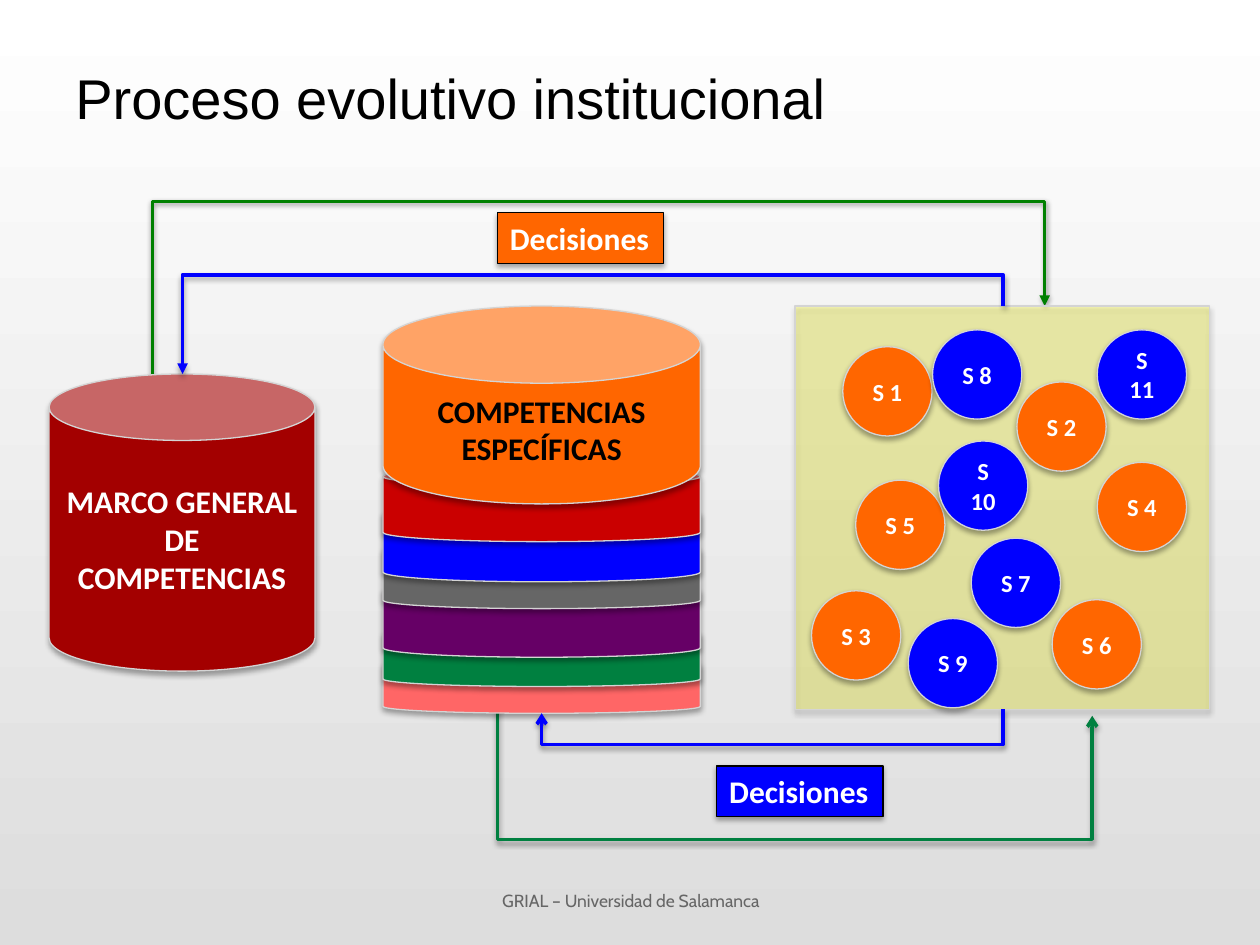
from lxml import etree
from pptx import Presentation
from pptx import util as u
from pptx.dml.color import RGBColor
from pptx.enum import shapes, text
from pptx.oxml import ns

BLACK = RGBColor(0x00, 0x00, 0x00)
WHITE = RGBColor(0xFF, 0xFF, 0xFF)
SILVER = RGBColor(0xDD, 0xDD, 0xDD)
EDGE = RGBColor(0xD4, 0xD4, 0xD4)
GRAY = RGBColor(0x66, 0x66, 0x66)
ORANGE = RGBColor(0xFF, 0x66, 0x00)
BLUE = RGBColor(0x00, 0x00, 0xFF)
LEAF = RGBColor(0x00, 0x80, 0x00)
GREEN = RGBColor(0x00, 0x80, 0x40)
WINE = RGBColor(0xA3, 0x00, 0x00)
RED = RGBColor(0xCA, 0x00, 0x00)
PLUM = RGBColor(0x66, 0x00, 0x66)
PINK = RGBColor(0xFF, 0x66, 0x66)
YELLOW = RGBColor(0xFF, 0xFF, 0x00)

CAN = shapes.MSO_SHAPE.CAN
BOX = shapes.MSO_SHAPE.RECTANGLE
DISC = shapes.MSO_SHAPE.OVAL
MID = text.MSO_ANCHOR.MIDDLE
TOP = text.MSO_ANCHOR.TOP
LEFT = text.PP_ALIGN.LEFT
CENTER = text.PP_ALIGN.CENTER

STACK_X, STACK_W, STACK_Y = 7.72, 6.4, 6.17
LAYERS = [
    (13.26, 1.12, PINK), (12.62, 1.22, GREEN), (11.73, 1.52, PLUM),
    (10.92, 1.35, GRAY), (10.16, 1.57, BLUE), (9.42, 1.5, RED),
]
DISC_D = 1.8
DISCS = [
    (5, 17.25, 9.68, ORANGE), (4, 22.12, 9.32, ORANGE),
    (3, 16.36, 11.91, ORANGE), (2, 20.5, 7.7, ORANGE),
    (1, 16.99, 6.99, ORANGE), (6, 21.21, 12.09, ORANGE),
    (8, 18.8, 6.65, BLUE), (7, 19.58, 10.85, BLUE),
    (9, 18.31, 12.47, BLUE), (10, 18.92, 8.89, BLUE),
    (11, 22.12, 6.65, BLUE),
]


def add(node, tag, **attrs):
    """Append a namespaced child element with the given attributes."""
    kid = etree.SubElement(node, ns.qn(tag))
    for key, val in attrs.items():
        kid.set(key, str(val))
    return kid


def shade(node, blur, dist, alpha):
    """Give a property element a black shadow that falls downwards."""
    for old in node.findall(ns.qn("a:effectLst")):
        node.remove(old)
    drop = add(add(node, "a:effectLst"), "a:outerShdw", blurRad=u.Pt(blur),
               dist=u.Pt(dist), dir=5400000, rotWithShape=0)
    add(add(drop, "a:srgbClr", val=BLACK), "a:alpha", val=alpha * 1000)


def write(shape, words, size=18, font="Calibri", color=WHITE, bold=True,
          align=CENTER, anchor=MID, wrap=True):
    """Fill a shape with one formatted paragraph and return its run."""
    frame = shape.text_frame
    frame.word_wrap = wrap
    frame.vertical_anchor = anchor
    para = frame.paragraphs[0]
    para.alignment = align
    run = para.add_run()
    run.text = words
    run.font.size = u.Pt(size)
    run.font.name = font
    run.font.bold = bold
    run.font.color.rgb = color
    return run


def note(host, x, y, w, h, words, **style):
    """Add a plain text box."""
    box = host.add_textbox(u.Cm(x), u.Cm(y), u.Cm(w), u.Cm(h))
    write(box, words, **style)


def solid(host, kind, x, y, w, h, fill, edge=EDGE):
    """Add a filled and outlined preset shape with a soft shadow."""
    shape = host.add_shape(kind, u.Cm(x), u.Cm(y), u.Cm(w), u.Cm(h))
    shape.shadow.inherit = False
    shape.fill.solid()
    shape.fill.fore_color.rgb = fill
    shape.line.color.rgb = edge
    shape.line.width = u.Pt(0.75)
    shade(shape.element.spPr, 3.1, 1.8, 35)
    return shape


def elbow(host, start, end, level, color, tip, mark):
    """Join two points by a line that runs across at the given level."""
    (x1, y1), (x2, y2) = start, end
    w, h = abs(y2 - y1), abs(x2 - x1)
    left, top = (x1 + x2 - w) / 2, (y1 + y2 - h) / 2
    line = host.add_connector(
        shapes.MSO_CONNECTOR.ELBOW, u.Cm(left), u.Cm(top),
        u.Cm(left + w), u.Cm(top + h))
    props = line.element.spPr
    frame = props.find(ns.qn("a:xfrm"))
    frame.set("rot", "5400000")
    frame.set("flipH", str(int(y2 < y1)))
    frame.set("flipV", str(int(x2 > x1)))
    bend = round((level - y1) / (y2 - y1) * 100000)
    guides = props.find(ns.qn("a:prstGeom")).find(ns.qn("a:avLst"))
    add(guides, "a:gd", name="adj1", fmla=f"val {bend}")
    line.line.color.rgb = color
    line.line.width = u.Pt(2)
    add(props.find(ns.qn("a:ln")), tip, type=mark)
    shade(props, 3.1, 1.6, 38)


def stack(host):
    """Build the pile of cylinders with its caption."""
    pile = host.add_group_shape().shapes
    for y, h, fill in LAYERS:
        solid(pile, CAN, STACK_X, y, STACK_W, h, fill)
    lid = solid(pile, CAN, STACK_X, STACK_Y, STACK_W, 3.99, ORANGE)
    lid.adjustments[0] = 0.39
    label = pile.add_shape(CAN, u.Cm(STACK_X), u.Cm(STACK_Y),
                           u.Cm(STACK_W), u.Cm(8.13))
    label.shadow.inherit = False
    label.fill.background()
    label.line.fill.background()
    run = write(label, "COMPETENCIAS ESPECÍFICAS", color=BLACK, anchor=TOP)
    props = run.font._element if hasattr(run.font, "_element") else run._r.rPr
    shade(props, 3, 2, 40)
    props.insert(1, props.find(ns.qn("a:effectLst")))


def tag(host, x, y, fill):
    """Add a decision label that fits its text."""
    shape = solid(host, BOX, x, y, 3.35, 1.02, fill, BLACK)
    write(shape, "Decisiones", align=LEFT, anchor=TOP, wrap=False)
    shape.text_frame.auto_size = text.MSO_AUTO_SIZE.SHAPE_TO_FIT_TEXT


def paint(slide):
    """Give the slide a gradient that darkens downwards."""
    fill = slide.background.fill
    fill.gradient()
    fill.gradient_angle = 270
    for stop, color in zip(fill.gradient_stops, (WHITE, SILVER)):
        stop.color.rgb = color


def main():
    """Build the slide and save it."""
    deck = Presentation()
    deck.slide_width, deck.slide_height = u.Cm(25.4), u.Cm(19.05)
    slide = deck.slides.add_slide(deck.slide_layouts[6])
    paint(slide)
    host = slide.shapes
    elbow(host, (21.06, 6.17), (3.07, 10.77), 4.06, LEAF,
          "a:headEnd", "triangle")
    elbow(host, (22.02, 14.43), (10.03, 14.15), 16.92, GREEN,
          "a:headEnd", "arrow")
    note(host, 1.27, 0.36, 16.33, 3.18, "Proceso evolutivo institucional",
         size=32, font="Arial", color=BLACK, bold=False, align=LEFT)
    note(host, 8.69, 17.65, 8.05, 1.02, "GRIAL – Universidad de Salamanca",
         size=10, font="Cabin", color=GRAY, bold=False)
    frame = solid(host, CAN, 0.99, 7.54, 5.36, 5.99, WINE)
    write(frame, "MARCO GENERAL DE COMPETENCIAS")
    stack(host)
    panel = solid(host, BOX, 16.03, 6.17, 8.36, 8.13, YELLOW)
    tint = panel.element.spPr.find(ns.qn("a:solidFill"))
    add(tint[0], "a:alpha", val=26000)
    for num, x, y, fill in DISCS:
        disc = solid(host, DISC, x, y, DISC_D, DISC_D, fill)
        write(disc, f"S {num}", size=14)
    elbow(host, (10.92, 14.38), (20.22, 14.3), 15.01, BLUE,
          "a:headEnd", "arrow")
    elbow(host, (20.22, 6.17), (3.68, 7.54), 5.54, BLUE,
          "a:tailEnd", "triangle")
    tag(host, 10.03, 4.29, ORANGE)
    tag(host, 14.45, 15.44, BLUE)
    deck.save("out.pptx")


if __name__ == "__main__":
    main()
